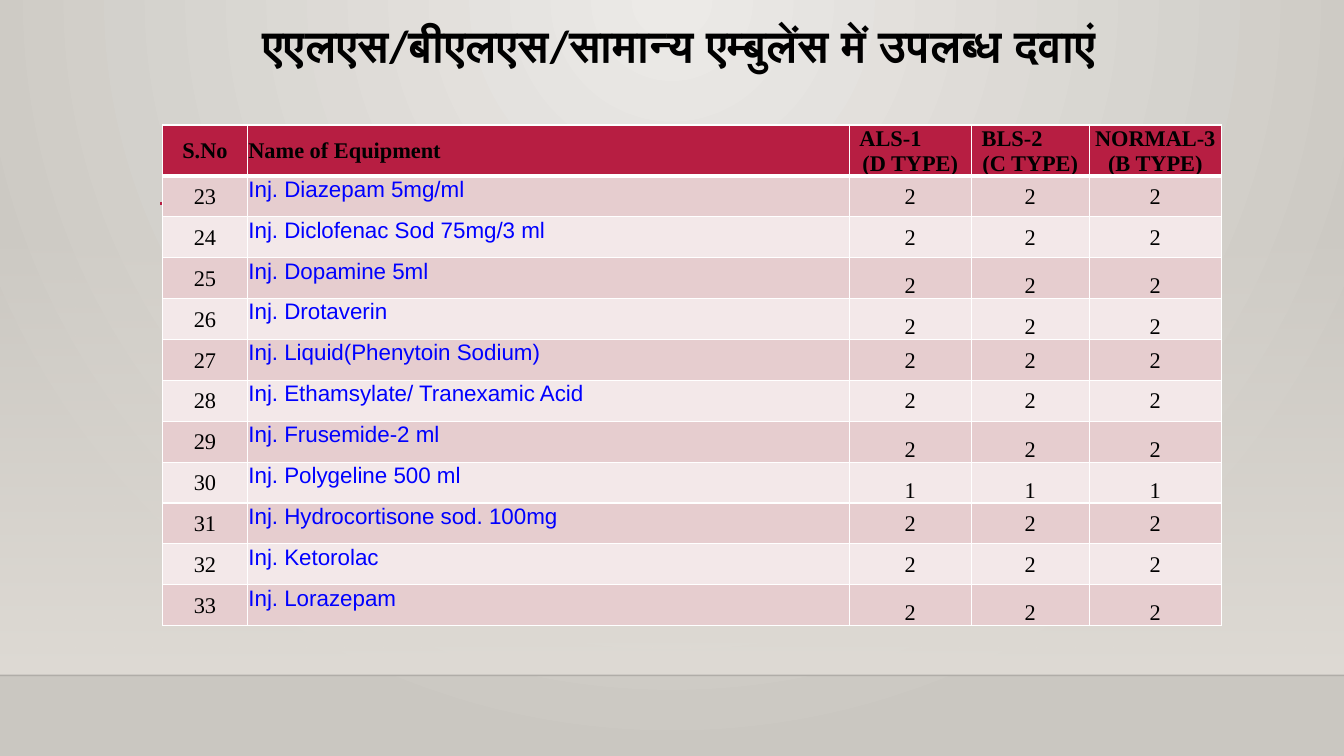
from pptx import Presentation
from pptx.dml.color import RGBColor
from pptx.enum.shapes import MSO_CONNECTOR, MSO_SHAPE
from pptx.enum.text import MSO_ANCHOR, PP_ALIGN
from pptx.oxml import parse_xml
from pptx.oxml.ns import nsdecls, qn
from pptx.oxml.xmlchemy import OxmlElement
from pptx.util import Cm, Pt

COLORS = {
    "black": "000000", "white": "FFFFFF", "red": "B71E42", "blue": "0000FF",
    "band_dark": "E6CDCF", "band_light": "F3E8E9",
    "glow": "ECEAE7", "edge": "CAC7C1", "wall": "DFDBD5",
}
HEAD_FONT = {"name": "Times New Roman", "size": Pt(16), "bold": True}
COUNT_FONT = {"name": "Times New Roman", "size": Pt(16), "bold": False}
DRUG_FONT = {"name": "Arial", "size": Pt(16), "bold": False}
TITLE_FONT = {"name": "Calibri", "size": Pt(32), "bold": True}
MARGINS = {"margin_left": Cm(0.03), "margin_right": Cm(0.03),
           "margin_top": Cm(0.03), "margin_bottom": 0}

TITLE = "एएलएस/बीएलएस/सामान्य एम्बुलेंस में उपलब्ध दवाएं"
HEADERS = [["S.No"], ["Name of Equipment"], ["ALS-1", "(D TYPE)"],
           ["BLS-2", "(C TYPE)"], ["NORMAL-3", "(B TYPE)"]]
COL_WIDTHS = [2.13, 15.17, 3.08, 2.97, 3.33]
HEAD_HEIGHT, ROW_HEIGHT = 1.26, 1.03
FIRST_NUMBER = 23
MID, LOW = MSO_ANCHOR.MIDDLE, MSO_ANCHOR.BOTTOM
# name, count in each ambulance type, anchor of the counts
DRUGS = [
    ("Inj. Diazepam 5mg/ml", 2, MID),
    ("Inj. Diclofenac Sod 75mg/3 ml", 2, MID),
    ("Inj. Dopamine 5ml", 2, LOW),
    ("Inj. Drotaverin", 2, LOW),
    ("Inj. Liquid(Phenytoin Sodium)", 2, MID),
    ("Inj. Ethamsylate/ Tranexamic Acid", 2, MID),
    ("Inj. Frusemide-2 ml", 2, LOW),
    ("Inj. Polygeline 500 ml", 1, LOW),
    ("Inj. Hydrocortisone sod. 100mg", 2, MID),
    ("Inj. Ketorolac", 2, MID),
    ("Inj. Lorazepam", 2, LOW),
]


def rgb(name):
    return RGBColor.from_string(COLORS[name])


def set_attrs(obj, values):
    for key, value in values.items():
        setattr(obj, key, value)


def set_gradient(props, stops, shade):
    """Replace the empty fill in props by a gradient of (position, colour, alpha) stops."""
    stops_xml = "".join(
        f'<a:gs pos="{pos * 1000}"><a:srgbClr val="{COLORS[color]}">'
        f'<a:alpha val="{alpha * 1000}"/></a:srgbClr></a:gs>'
        for pos, color, alpha in stops)
    grad = parse_xml(f'<a:gradFill {nsdecls("a")} rotWithShape="1">'
                     f'<a:gsLst>{stops_xml}</a:gsLst>{shade}</a:gradFill>')
    props.replace(props.find(qn("a:noFill")), grad)


def set_background(s):
    s.background.fill.background()
    set_gradient(s.element.find(".//" + qn("p:bgPr")),
                 [(0, "glow", 100), (100, "edge", 100)],
                 '<a:path path="circle"><a:fillToRect l="43000" r="43000" b="100000"/></a:path>')


def add_wall(s, width):
    sp = s.shapes.add_shape(MSO_SHAPE.RECTANGLE, 0, Cm(5.61), width, Cm(11.41))
    sp.shadow.inherit = False
    sp.line.fill.background()
    sp.fill.background()
    set_gradient(sp.element.spPr, [(0, "wall", 0), (100, "wall", 100)],
                 '<a:lin ang="5400000" scaled="0"/>')


def add_rule(s, left, right, y, color, weight, alpha=100):
    line = s.shapes.add_connector(MSO_CONNECTOR.STRAIGHT, left, y, right, y)
    line.line.color.rgb = rgb(color)
    line.line.width = Pt(weight)
    opacity = OxmlElement("a:alpha")
    opacity.set("val", str(alpha * 1000))
    line.element.spPr.find(".//" + qn("a:srgbClr")).append(opacity)
    line.element.spPr.append(OxmlElement("a:effectLst"))


def set_title(s):
    title = s.shapes.title
    set_attrs(title, {"left": Cm(3.78), "top": Cm(0.46),
                      "width": Cm(26.67), "height": Cm(2.92)})
    tf = title.text_frame
    tf.text = TITLE
    set_attrs(tf, {"vertical_anchor": MSO_ANCHOR.TOP, "word_wrap": True})
    p = tf.paragraphs[0]
    set_attrs(p, {"alignment": PP_ALIGN.CENTER, "line_spacing": 0.9})
    set_attrs(p.runs[0].font, TITLE_FONT)
    p.runs[0].font.color.rgb = rgb("black")


def set_borders(cell, top, bottom):
    tcPr = cell._tc.get_or_add_tcPr()
    for i, (side, weight) in enumerate(zip("LRTB", (1, 1, top, bottom))):
        tcPr.insert(i, parse_xml(
            f'<a:ln{side} {nsdecls("a")} w="{Pt(weight)}"><a:solidFill>'
            f'<a:srgbClr val="{COLORS["white"]}"/></a:solidFill></a:ln{side}>'))


def fill_cell(cell, lines, font, fill, color="black", align=PP_ALIGN.CENTER,
              anchor=MID, top=1, bottom=1):
    set_attrs(cell, {**MARGINS, "vertical_anchor": anchor})
    cell.fill.solid()
    cell.fill.fore_color.rgb = rgb(fill)
    set_borders(cell, top, bottom)
    cell.text_frame.text = "\n".join(lines)
    for p in cell.text_frame.paragraphs:
        p.alignment = align
        for r in p.runs:
            set_attrs(r.font, font)
            r.font.color.rgb = rgb(color)


def fill_header(table):
    for col, lines in enumerate(HEADERS):
        cell = table.cell(0, col)
        fill_cell(cell, lines, HEAD_FONT, "red", bottom=3,
                  align=PP_ALIGN.LEFT if col == 1 else PP_ALIGN.CENTER,
                  anchor=LOW if col == 4 else MID)
        if col in (2, 3):
            p = cell.text_frame.paragraphs[0]
            p.alignment = PP_ALIGN.LEFT
            p._p.get_or_add_pPr().set("marL", str(Cm(0.23)))


def add_drug_table(s):
    rows = len(DRUGS) + 1
    table = s.shapes.add_table(
        rows, len(HEADERS), Cm(4.1), Cm(3.15), Cm(sum(COL_WIDTHS)),
        Cm(HEAD_HEIGHT + ROW_HEIGHT * len(DRUGS))).table
    for column, width in zip(table.columns, COL_WIDTHS):
        column.width = Cm(width)
    for i, row in enumerate(table.rows):
        row.height = Cm(ROW_HEIGHT if i else HEAD_HEIGHT)
    fill_header(table)
    for i, (drug, count, anchor) in enumerate(DRUGS, 1):
        band = {"fill": "band_dark" if i % 2 else "band_light", "top": 3 if i == 1 else 1}
        fill_cell(table.cell(i, 0), [str(FIRST_NUMBER + i - 1)], COUNT_FONT, **band)
        fill_cell(table.cell(i, 1), [drug], DRUG_FONT, color="blue",
                  align=PP_ALIGN.LEFT, anchor=MSO_ANCHOR.TOP, **band)
        for col in range(2, len(HEADERS)):
            fill_cell(table.cell(i, col), [str(count)], COUNT_FONT, anchor=anchor, **band)


def main():
    prs = Presentation()
    prs.slide_width, prs.slide_height = Cm(33.87), Cm(19.05)
    s = prs.slides.add_slide(prs.slide_layouts[5])
    set_background(s)
    add_wall(s, prs.slide_width)
    add_rule(s, 0, prs.slide_width, Cm(17.02), "black", 1, alpha=20)
    add_rule(s, Cm(4.04), Cm(30.73), Cm(5.13), "red", 2.5)
    set_title(s)
    add_drug_table(s)
    prs.save("out.pptx")


if __name__ == "__main__":
    main()
